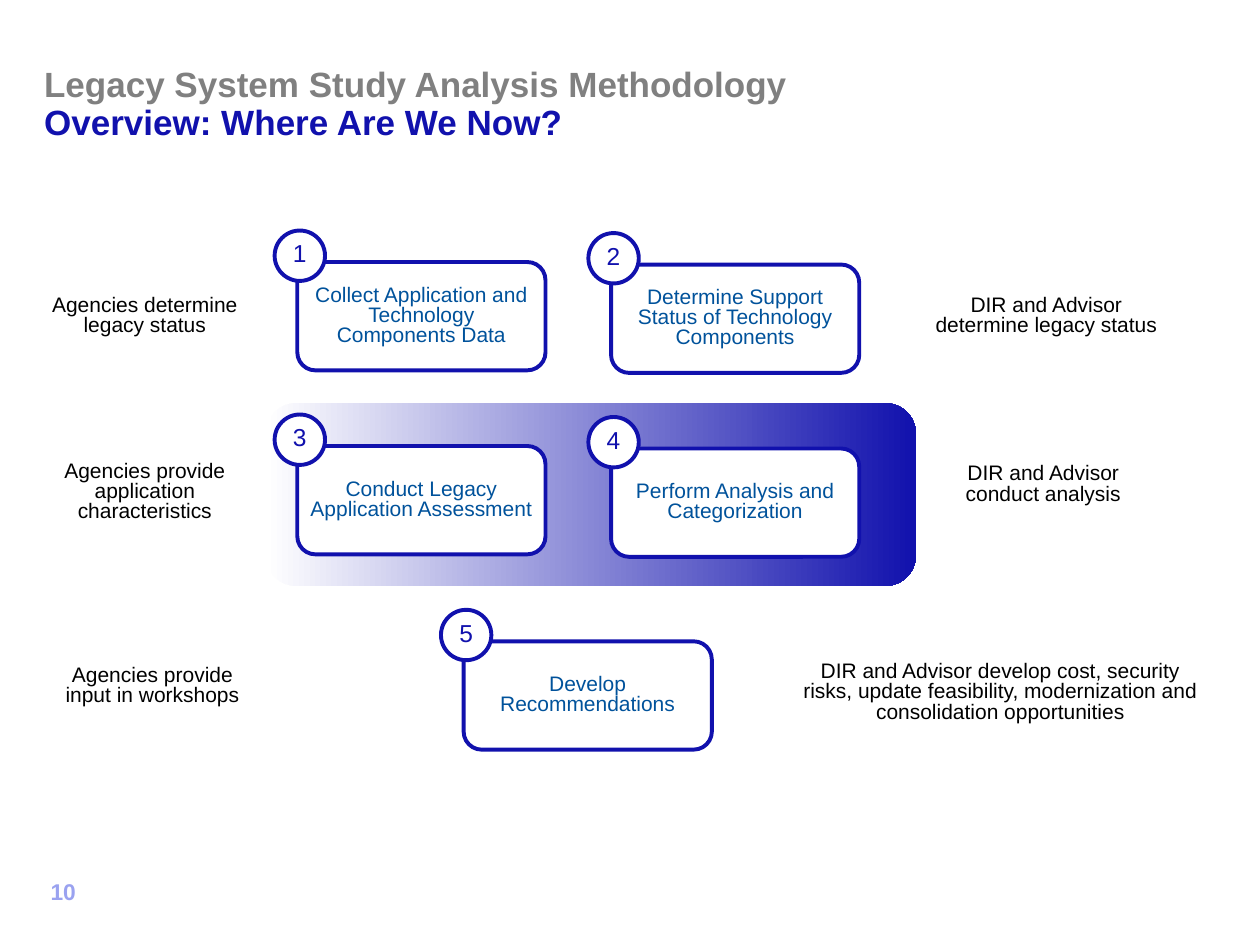
from pptx import Presentation
from pptx.dml.color import RGBColor
from pptx.enum.shapes import MSO_SHAPE as Shape
from pptx.enum.text import MSO_ANCHOR as Anchor, PP_ALIGN as Align
from pptx.util import Inches, Pt

FONT = "Arial"
COLORS = {
    "navy": "1111AD",
    "blue": "00529B",
    "gray": "808080",
    "lilac": "9AA2F0",
    "white": "FFFFFF",
    "black": "000000",
}
TITLE = [
    ("Legacy System Study Analysis Methodology", "gray"),
    ("Overview: Where Are We Now?", "navy"),
]
PAGE_NUMBER = "10"

LEFT, MIDDLE, RIGHT = 2.18, 3.5, 4.67
ROWS = [1.83, 3.29, 4.84]
STEPS = [
    ("Collect Application and Technology Components Data", LEFT, ROWS[0], False),
    ("Determine Support Status of Technology Components", RIGHT, ROWS[0] + 0.02, False),
    ("Conduct Legacy Application Assessment", LEFT, ROWS[1], True),
    ("Perform Analysis and Categorization", RIGHT, ROWS[1] + 0.02, True),
    ("Develop Recommendations", MIDDLE, ROWS[2], False),
]
CARD_OFFSET = (0.18, 0.25)
CARD_SIZE = (1.97, 0.86)
BADGE_SIZE = (0.4, 0.4)
HIGHLIGHT_BOX = (2.11, 3.2, 5.16, 1.45)

NOTES = [
    ("Agencies determine legacy status", (0.26, 2.3, 1.78, 0.41)),
    ("DIR and Advisor determine legacy status", (7.22, 2.3, 2.17, 0.41)),
    ("Agencies provide application characteristics", (0.26, 3.62, 1.78, 0.41)),
    ("DIR and Advisor conduct analysis", (7.39, 3.64, 1.78, 0.41)),
    ("Agencies provide input in workshops", (0.32, 5.24, 1.78, 0.41)),
    ("DIR and Advisor develop cost, security risks, update feasibility, "
     "modernization and consolidation opportunities", (6.25, 5.21, 3.38, 0.71)),
]


def color(name):
    return RGBColor.from_string(COLORS[name])


def inches(values):
    return [Inches(value) for value in values]


def write(shape, text, size, color_name, align=Align.CENTER, spacing=0.8, bold=False):
    shape.text_frame.word_wrap = True
    paragraph = shape.text_frame.paragraphs[0]
    paragraph.text = text
    paragraph.alignment = align
    paragraph.line_spacing = spacing
    font = paragraph.font
    font.name, font.size, font.bold = FONT, Pt(size), bold
    font.color.rgb = color(color_name)


def add_outlined(shapes, kind, box, text, size, color_name, inset, filled):
    shape = shapes.add_shape(kind, *inches(box))
    shape.shadow.inherit = False
    if filled:
        shape.fill.solid()
        shape.fill.fore_color.rgb = color("white")
    else:
        shape.fill.background()
    shape.line.color.rgb = color("navy")
    shape.line.width = Pt(2.25)
    frame = shape.text_frame
    frame.vertical_anchor = Anchor.MIDDLE
    frame.margin_left = frame.margin_right = Inches(inset)
    frame.margin_top = frame.margin_bottom = Inches(inset)
    write(shape, text, size, color_name)


def add_title(slide):
    title = slide.shapes.title
    title.left, title.top, title.width, title.height = inches((0.25, 0.42, 9.5, 0.83))
    title.text_frame.vertical_anchor = Anchor.MIDDLE
    title.text_frame.word_wrap = True
    paragraph = title.text_frame.paragraphs[0]
    paragraph.alignment = Align.LEFT
    paragraph.line_spacing = 0.9
    for index, (text, color_name) in enumerate(TITLE):
        if index:
            paragraph.add_line_break()
        run = paragraph.add_run()
        run.text = text
        run.font.name, run.font.size, run.font.bold = FONT, Pt(20), True
        run.font.color.rgb = color(color_name)


def add_highlight(slide):
    band = slide.shapes.add_shape(Shape.ROUNDED_RECTANGLE, *inches(HIGHLIGHT_BOX))
    band.shadow.inherit = False
    band.line.fill.background()
    band.fill.gradient()
    band.fill.gradient_angle = 0
    for stop, color_name in zip(band.fill.gradient_stops, ("white", "navy")):
        stop.color.rgb = color(color_name)


def add_step(slide, number, text, left, top, filled):
    shapes = slide.shapes.add_group_shape().shapes
    card = (left + CARD_OFFSET[0], top + CARD_OFFSET[1], *CARD_SIZE)
    badge = (left, top, *BADGE_SIZE)
    add_outlined(shapes, Shape.ROUNDED_RECTANGLE, card, text, 12, "blue", 0.05, filled)
    add_outlined(shapes, Shape.OVAL, badge, str(number), 14, "navy", 0, True)


def main():
    presentation = Presentation()
    presentation.slide_width, presentation.slide_height = inches((10, 7.5))
    slide = presentation.slides.add_slide(presentation.slide_layouts[5])
    add_title(slide)
    page = slide.shapes.add_textbox(*inches((0.25, 6.92, 0.45, 0.4)))
    write(page, PAGE_NUMBER, 13, "lilac", Align.RIGHT, 1.0, True)
    add_highlight(slide)
    for number, step in enumerate(STEPS, 1):
        add_step(slide, number, *step)
    for text, box in NOTES:
        write(slide.shapes.add_textbox(*inches(box)), text, 12, "black")
    presentation.save("out.pptx")


if __name__ == "__main__":
    main()
